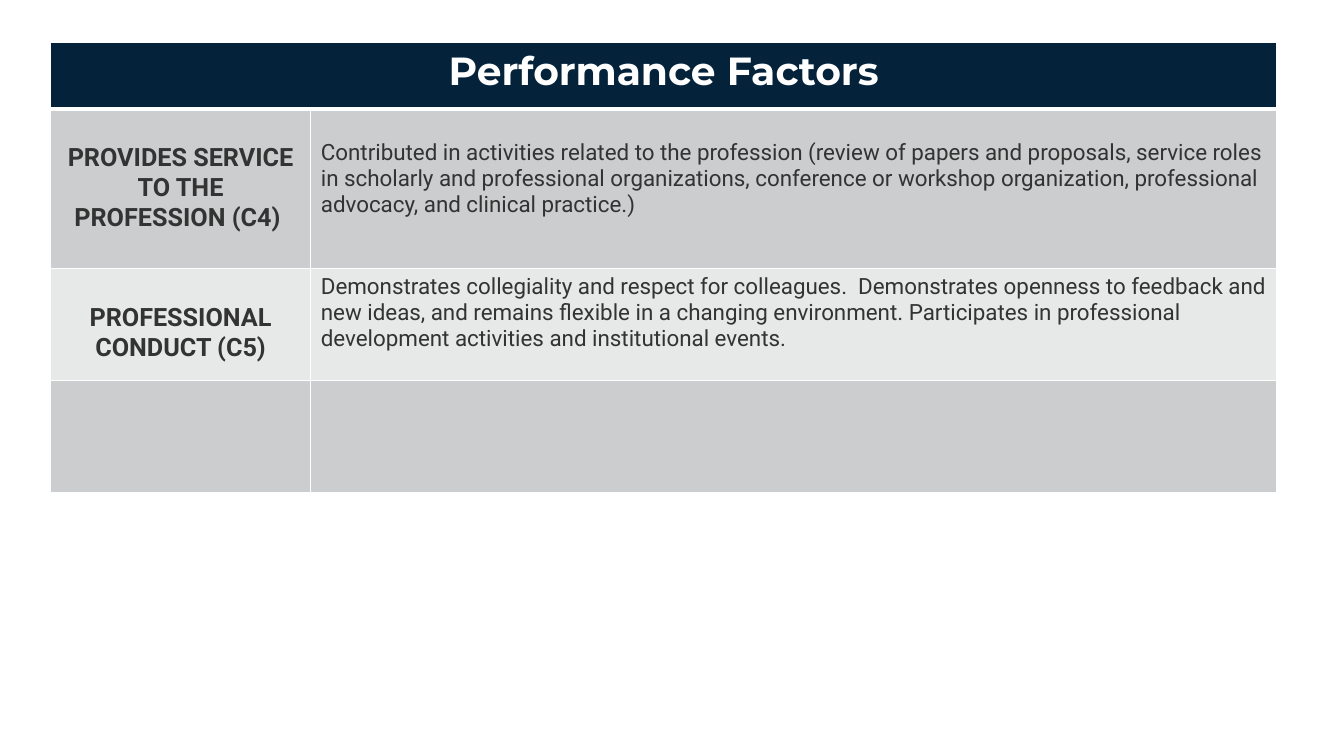
from dataclasses import dataclass

from lxml.etree import SubElement
from pptx import Presentation
from pptx.dml.color import RGBColor
from pptx.enum.text import MSO_ANCHOR, PP_ALIGN
from pptx.oxml.ns import qn
from pptx.util import Inches, Pt


@dataclass(frozen=True)
class Theme:
    navy: str = "04233B"
    dark_band: str = "CCCDCE"
    light_band: str = "E7E8E8"
    white: str = "FFFFFF"
    ink: str = "333333"
    title_font: str = "Montserrat"
    body_font: str = "Roboto"
    title_size: int = 28
    label_size: int = 18
    body_size: int = 16
    rule: int = 1
    heavy_rule: int = 3


THEME = Theme()
GRID_COLUMNS, GRID_ROWS = 160, 90
WIDTH, HEIGHT = Inches(13.33), Inches(7.5)
COLUMN_SPANS = (31, 115)
ROW_SPANS = (8, 19, 13.3, 13.3)
PAD = Inches(0.05)

# Label, label offset, description, description offset (offsets in grid rows)
FACTORS = (
    ("PROVIDES SERVICE TO THE PROFESSION (C4) ", 3.5,
     "Contributed in activities related to the profession (review of papers and "
     "proposals, service roles in scholarly and professional organizations, "
     "conference or workshop organization, professional advocacy, and clinical "
     "practice.)", 3.1),
    ("PROFESSIONAL CONDUCT (C5)", 3.5,
     "Demonstrates collegiality and respect for colleagues.  Demonstrates openness "
     "to feedback and new ideas, and remains flexible in a changing environment. "
     "Participates in professional development activities and institutional "
     "events.", 0),
    ("", 0, "", 0),
)


def across(n):
    return round(WIDTH * n / GRID_COLUMNS)


def down(n):
    return round(HEIGHT * n / GRID_ROWS)


def add_border(cell, side, width):
    ln = SubElement(cell._tc.get_or_add_tcPr(), qn(f"a:ln{side}"), w=str(Pt(width)))
    fill = SubElement(ln, qn("a:solidFill"))
    SubElement(fill, qn("a:srgbClr"), val=THEME.white)


def style_cell(cell, fill, top=THEME.rule, bottom=THEME.rule):
    """Borders go in before the fill, as the schema orders them."""
    for side, width in zip("LRTB", (THEME.rule, THEME.rule, top, bottom)):
        add_border(cell, side, width)
    cell.fill.solid()
    cell.fill.fore_color.rgb = RGBColor.from_string(fill)


def write_cell(cell, text, font=THEME.body_font, size=THEME.body_size,
               color=THEME.ink, bold=False, align=PP_ALIGN.LEFT, offset=0):
    cell.vertical_anchor = MSO_ANCHOR.TOP
    cell.margin_top = PAD + down(offset) if offset else PAD
    p = cell.text_frame.paragraphs[0]
    p.alignment = align
    p.font.size = Pt(size)
    if text:
        r = p.add_run()
        r.text = text
        r.font.name = font
        r.font.size = Pt(size)
        r.font.bold = bold
        r.font.color.rgb = RGBColor.from_string(color)


def add_factor_table(slide):
    table = slide.shapes.add_table(
        len(ROW_SPANS), len(COLUMN_SPANS), across(6), down(5),
        across(sum(COLUMN_SPANS)), down(sum(ROW_SPANS))).table
    for column, span in zip(table.columns, COLUMN_SPANS):
        column.width = across(span)
    for row, span in zip(table.rows, ROW_SPANS):
        row.height = down(span)
    return table


def fill_header(table):
    for cell in table.rows[0].cells:
        style_cell(cell, THEME.navy, bottom=THEME.heavy_rule)
    header = table.cell(0, 0)
    header.merge(table.cell(0, 1))
    write_cell(header, "Performance Factors", font=THEME.title_font,
               size=THEME.title_size, color=THEME.white, bold=True,
               align=PP_ALIGN.CENTER)


def fill_factors(table):
    for i, (label, label_offset, description, offset) in enumerate(FACTORS, 1):
        band = THEME.dark_band if i % 2 else THEME.light_band
        top = THEME.heavy_rule if i == 1 else THEME.rule
        for cell in table.rows[i].cells:
            style_cell(cell, band, top=top)
        write_cell(table.cell(i, 0), label, size=THEME.label_size, bold=True,
                   align=PP_ALIGN.CENTER, offset=label_offset)
        write_cell(table.cell(i, 1), description, offset=offset)


def main():
    prs = Presentation()
    prs.slide_width, prs.slide_height = WIDTH, HEIGHT
    slide = prs.slides.add_slide(prs.slide_layouts[6])
    table = add_factor_table(slide)
    fill_header(table)
    fill_factors(table)
    prs.save("out.pptx")


if __name__ == "__main__":
    main()
